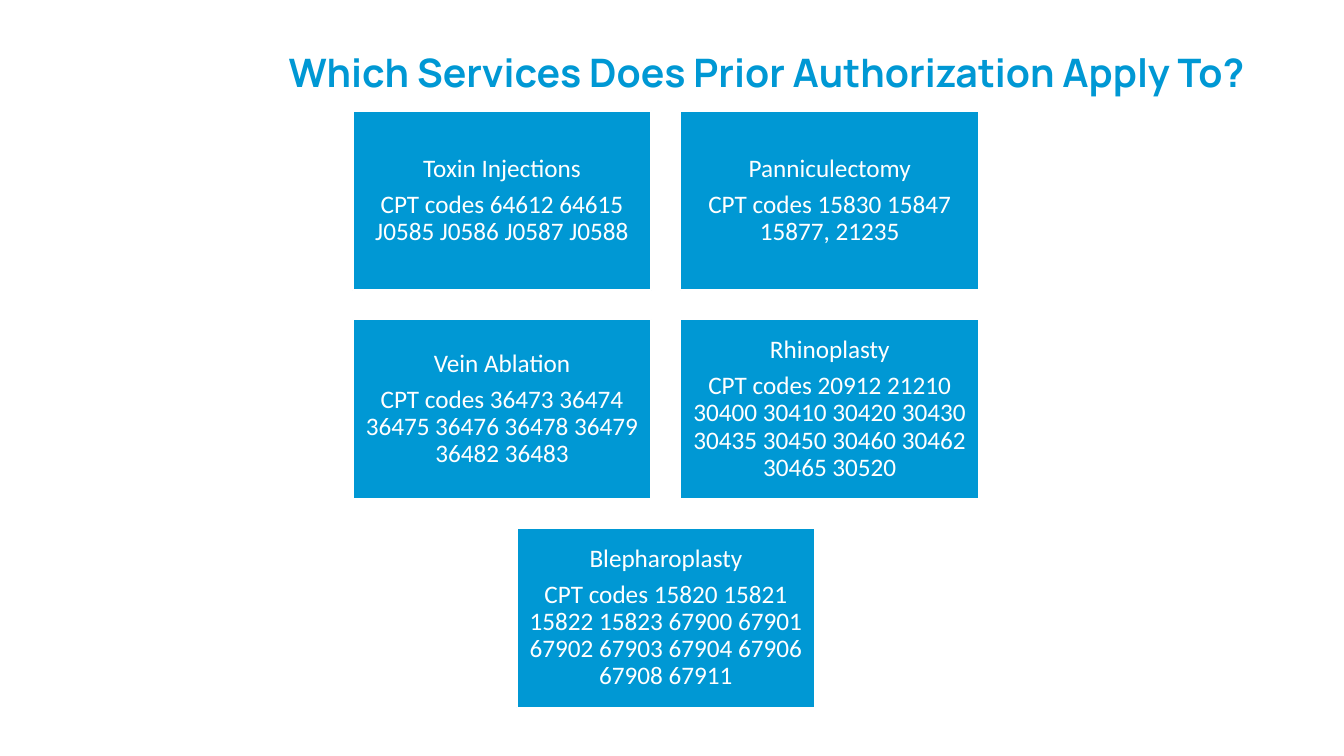
from pptx import Presentation
from pptx.dml.color import RGBColor
from pptx.enum.shapes import MSO_SHAPE as Shape
from pptx.enum.text import MSO_ANCHOR as Anchor, MSO_AUTO_SIZE as AutoSize, PP_ALIGN as Align
from pptx.util import Inches, Pt

BLUE = RGBColor(0x00, 0x98, 0xD4)
WHITE = RGBColor(0xFF, 0xFF, 0xFF)

SERVICES = [
    ("Toxin Injections", "64612 64615 J0585 J0586 J0587 J0588"),
    ("Panniculectomy", "15830 15847 15877, 21235"),
    ("Vein Ablation", "36473 36474 36475 36476 36478 36479 36482 36483"),
    ("Rhinoplasty", "20912 21210 30400 30410 30420 30430 30435 30450 "
                    "30460 30462 30465 30520"),
    ("Blepharoplasty", "15820 15821 15822 15823 67900 67901 67902 67903 "
                       "67904 67906 67908 67911"),
]
COLUMNS = 2


class ServiceSlide:
    """Style, card grid and current slide."""
    title_font, body_font = "Manrope", "Calibri"
    left, top = 3.5, 1.1
    card_width, card_height = 2.96, 1.78
    column_step, row_step = 3.25, 2.07
    inset = Inches(0.07)

    def __init__(self, deck):
        self.slide = deck.slides.add_slide(deck.slide_layouts[5])

    def style(self, para, font_name, size, color, bold=False):
        para.alignment = Align.CENTER
        font = para.font
        font.name, font.size, font.bold = font_name, Pt(size), bold
        font.color.rgb = color

    def title(self, text):
        box = self.slide.shapes.title
        box.left, box.top = Inches(2.46), Inches(0.46)
        box.width, box.height = Inches(10.28), Inches(0.51)
        frame = box.text_frame
        frame.text = text
        frame.word_wrap = False
        frame.auto_size = AutoSize.NONE
        frame.vertical_anchor = Anchor.MIDDLE
        self.style(frame.paragraphs[0], self.title_font, 28, BLUE, bold=True)

    def card(self, column, row, lines):
        box = self.slide.shapes.add_shape(
            Shape.RECTANGLE,
            Inches(self.left + column * self.column_step),
            Inches(self.top + row * self.row_step),
            Inches(self.card_width), Inches(self.card_height))
        box.shadow.inherit = False
        box.fill.solid()
        box.fill.fore_color.rgb = BLUE
        box.line.color.rgb = WHITE
        box.line.width = Pt(1.25)
        frame = box.text_frame
        frame.word_wrap = True
        frame.vertical_anchor = Anchor.MIDDLE
        frame.margin_left = frame.margin_right = self.inset
        frame.margin_top = frame.margin_bottom = self.inset
        frame.text = "\n".join(lines)
        for para in frame.paragraphs:
            para.line_spacing = 0.9
            para.space_after = Pt(6.3)
            self.style(para, self.body_font, 18, WHITE)


def main():
    deck = Presentation()
    deck.slide_width, deck.slide_height = Inches(13.33), Inches(7.5)
    page = ServiceSlide(deck)

    # Heading
    page.title("Which Services Does Prior Authorization Apply To?")

    # Service cards, with a short last row centred
    for index, (service, codes) in enumerate(SERVICES):
        row, column = divmod(index, COLUMNS)
        in_row = min(COLUMNS, len(SERVICES) - row * COLUMNS)
        page.card(column + (COLUMNS - in_row) / 2, row,
                  [service, f"CPT codes {codes}"])

    deck.save("out.pptx")


if __name__ == "__main__":
    main()
